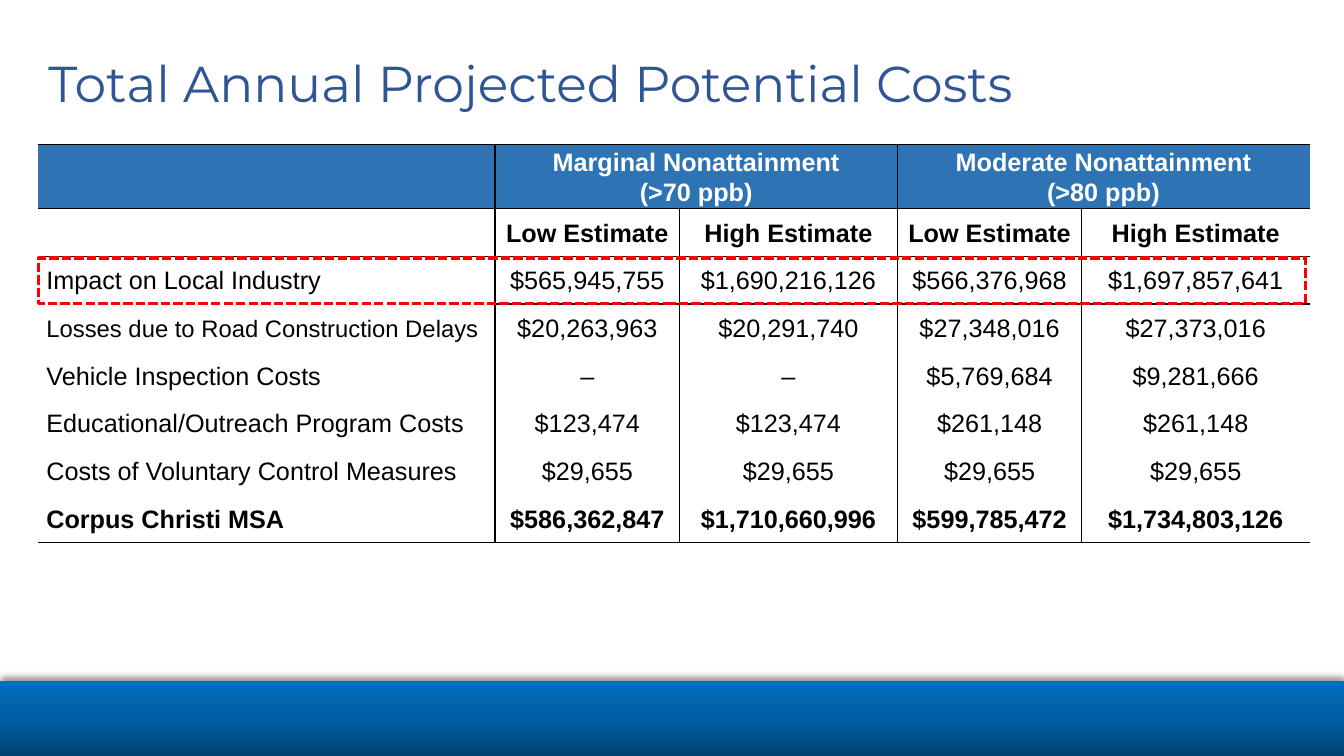
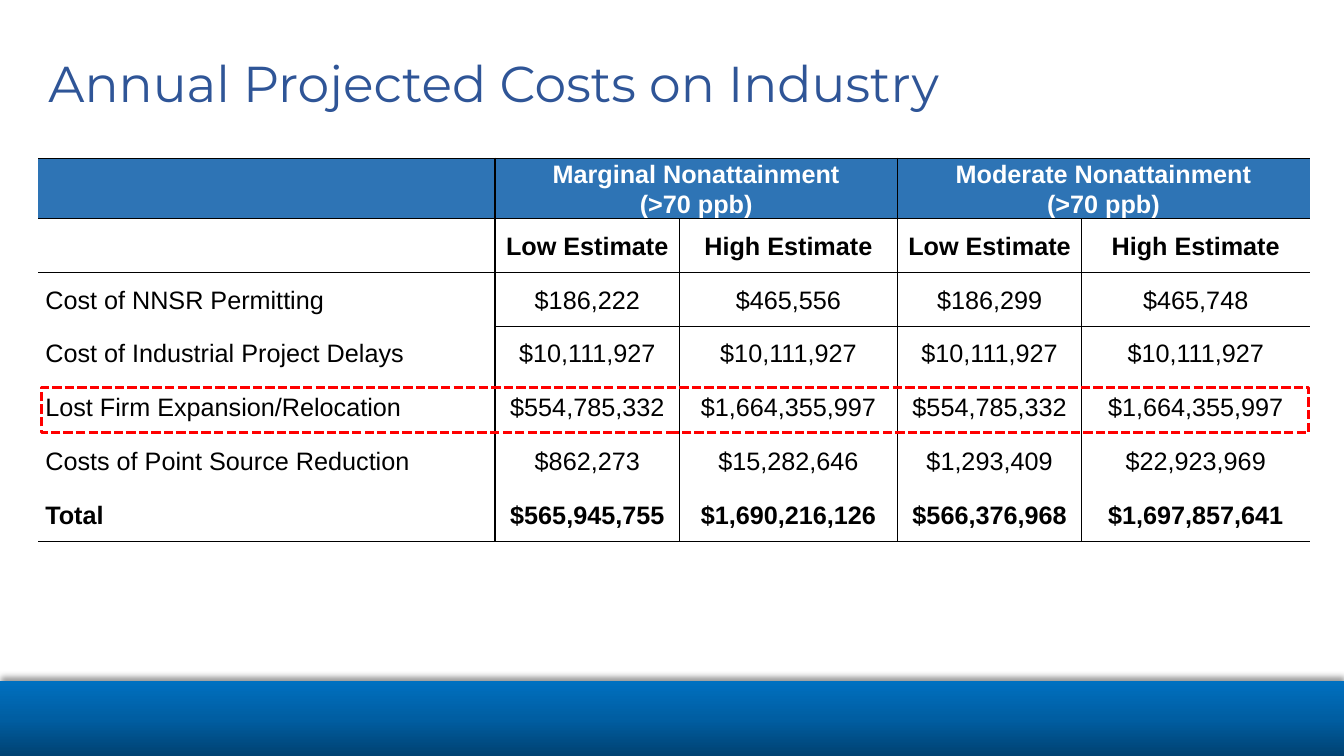
from copy import deepcopy
from dataclasses import dataclass

from pptx import Presentation
from pptx.dml.color import RGBColor
from pptx.enum.dml import MSO_LINE
from pptx.enum.shapes import MSO_SHAPE
from pptx.enum.text import MSO_ANCHOR, PP_ALIGN
from pptx.oxml import parse_xml
from pptx.oxml.ns import nsdecls, qn
from pptx.util import Inches, Pt

SQUARE_DASH = MSO_LINE.SQUARE_DOT
RECTANGLE = MSO_SHAPE.RECTANGLE
MIDDLE = MSO_ANCHOR.MIDDLE
LEFT, CENTER = PP_ALIGN.LEFT, PP_ALIGN.CENTER
TITLE_ONLY = 5
PLAIN_TABLE_STYLE = "{2D5ABB26-0587-4C30-8999-92F81FD0307C}"


@dataclass(frozen=True)
class Theme:
    title_font: str = "Montserrat"
    table_font: str = "Arial"
    title_size: float = 36
    table_size: float = 18
    long_label_size: float = 17
    rule_width: float = 1
    highlight_width: float = 2.25
    title: str = "2F5597"
    header: str = "2E74B5"
    header_text: str = "FFFFFF"
    text: str = "000000"
    highlight: str = "FF0000"
    band: tuple = ("004272", "005EA2", "0070C0")


THEME = Theme()
SLIDE_WIDTH, SLIDE_HEIGHT = 13.33, 7.5
BAND_HEIGHT = 0.74
MARGIN_LEFT = 0.38
COLUMN_WIDTHS = (4.53, 1.83, 2.16, 1.83, 2.26)
RULED_COLUMNS = (1, 3)  # a vertical rule stands left of each
HIGHLIGHT_WIDTH, HIGHLIGHT_HEIGHT = 12.57, 0.45
ESTIMATES = ("", "Low Estimate", "High Estimate", "Low Estimate", "High Estimate")
LONG_LABEL = "Losses due to Road Construction Delays"

TOTAL_COSTS = (
    ("Impact on Local Industry", "$565,945,755", "$1,690,216,126", "$566,376,968", "$1,697,857,641"),
    (LONG_LABEL, "$20,263,963", "$20,291,740", "$27,348,016", "$27,373,016"),
    ("Vehicle Inspection Costs", "–", "–", "$5,769,684", "$9,281,666"),
    ("Educational/Outreach Program Costs", "$123,474", "$123,474", "$261,148", "$261,148"),
    ("Costs of Voluntary Control Measures", "$29,655", "$29,655", "$29,655", "$29,655"),
    ("Corpus Christi MSA", "$586,362,847", "$1,710,660,996", "$599,785,472", "$1,734,803,126"),
)
INDUSTRY_COSTS = (
    ("Cost of NNSR Permitting", "$186,222", "$465,556", "$186,299", "$465,748"),
    ("Cost of Industrial Project Delays", "$10,111,927", "$10,111,927", "$10,111,927", "$10,111,927"),
    ("Lost Firm Expansion/Relocation", "$554,785,332", "$1,664,355,997", "$554,785,332", "$1,664,355,997"),
    ("Costs of Point Source Reduction", "$862,273", "$15,282,646", "$1,293,409", "$22,923,969"),
    ("Total", "$565,945,755", "$1,690,216,126", "$566,376,968", "$1,697,857,641"),
)


def rgb(value):
    return RGBColor.from_string(value)


def add_span(para, text, font, size, color, bold=False):
    span = para.add_run()
    span.text = text
    span.font.name = font
    span.font.size = Pt(size)
    span.font.color.rgb = rgb(color)
    span.font.bold = bold


def add_footer_band(slide):
    """Draw the gradient band and hand it to the slide's layout, which all slides share."""
    band = slide.shapes.add_shape(
        RECTANGLE, 0, Inches(SLIDE_HEIGHT - BAND_HEIGHT), Inches(SLIDE_WIDTH), Inches(BAND_HEIGHT))
    band.line.fill.background()
    band.fill.gradient()
    band.fill.gradient_angle = 90
    stop_list = band.element.spPr.find(".//" + qn("a:gsLst"))
    stop_list.insert(1, deepcopy(stop_list[0]))
    for index, (stop, color) in enumerate(zip(band.fill.gradient_stops, THEME.band)):
        stop.position = index / 2
        stop.color.rgb = rgb(color)
    band.shadow.inherit = False
    band.element.spPr.find(qn("a:effectLst")).append(parse_xml(
        f'<a:outerShdw {nsdecls("a")} blurRad="{Pt(4)}" dist="{Pt(3)}" dir="16200000" rotWithShape="0">'
        '<a:srgbClr val="000000"><a:alpha val="40000"/></a:srgbClr></a:outerShdw>'))
    slide.slide_layout.shapes.element.append(band.element)


def write_title(slide, text):
    box = slide.shapes.title
    box.left, box.top = Inches(MARGIN_LEFT), Inches(0.13)
    box.width, box.height = Inches(11.5), Inches(1.45)
    box.text_frame.vertical_anchor = MIDDLE
    para = box.text_frame.paragraphs[0]
    para.alignment = LEFT
    para.line_spacing = 0.9
    add_span(para, text, THEME.title_font, THEME.title_size, THEME.title)


def set_borders(cell, sides):
    """Rule the sides named by letters out of L, R, T and B."""
    properties = cell._tc.get_or_add_tcPr()
    for side in "LRTB":
        if side in sides:
            properties.append(parse_xml(
                f'<a:ln{side} {nsdecls("a")} w="{Pt(THEME.rule_width)}"><a:solidFill>'
                f'<a:srgbClr val="{THEME.text}"/></a:solidFill></a:ln{side}>'))


def cell_sides(row, column, last_row):
    sides = ""
    if column in RULED_COLUMNS:
        sides += "L"
    if column + 1 in RULED_COLUMNS:
        sides += "R"
    if row < 2 or (row == 2 and column > 0):
        sides += "T"
    if row in (0, last_row) or (row == 1 and column > 0):
        sides += "B"
    return sides


def fill_cell(cell, text, row, column, last_row, side_margin):
    set_borders(cell, cell_sides(row, column, last_row))
    if row == 0:
        cell.fill.solid()
        cell.fill.fore_color.rgb = rgb(THEME.header)
    else:
        cell.fill.background()
    cell.vertical_anchor = MIDDLE
    cell.margin_left = cell.margin_right = Inches(side_margin)
    cell.margin_top = cell.margin_bottom = 0
    if not text:
        return
    size = THEME.long_label_size if text == LONG_LABEL else THEME.table_size
    color = THEME.header_text if row == 0 else THEME.text
    frame = cell.text_frame
    for index, line in enumerate(text.split("\n")):
        para = frame.add_paragraph() if index else frame.paragraphs[0]
        para.alignment = CENTER if column else LEFT
        para.line_spacing = 1.07
        add_span(para, line, THEME.table_font, size, color, bold=row in (0, 1, last_row))


def add_cost_table(slide, top, height, header_height, limits, costs, body_margin):
    marginal, moderate = limits
    header = ("", f"Marginal Nonattainment\n({marginal})", "",
              f"Moderate Nonattainment\n({moderate})", "")
    rows = (header, ESTIMATES) + costs
    last_row = len(rows) - 1
    frame = slide.shapes.add_table(
        len(rows), len(COLUMN_WIDTHS), Inches(MARGIN_LEFT), Inches(top),
        Inches(sum(COLUMN_WIDTHS)), Inches(height))
    frame.element.find(".//" + qn("a:tableStyleId")).text = PLAIN_TABLE_STYLE
    table = frame.table
    table.first_row = table.horz_banding = False
    for column, width in zip(table.columns, COLUMN_WIDTHS):
        column.width = Inches(width)
    row_height = (height - header_height) / last_row
    for row, texts in enumerate(rows):
        table.rows[row].height = Inches(row_height if row else header_height)
        side_margin = 0.08 if row < 2 else body_margin
        for column, text in enumerate(texts):
            fill_cell(table.cell(row, column), text, row, column, last_row, side_margin)
    for column in RULED_COLUMNS:
        table.cell(0, column).merge(table.cell(0, column + 1))


def add_highlight(slide, left, top):
    box = slide.shapes.add_shape(
        RECTANGLE, Inches(left), Inches(top), Inches(HIGHLIGHT_WIDTH), Inches(HIGHLIGHT_HEIGHT))
    box.shadow.inherit = False
    box.fill.background()
    box.line.color.rgb = rgb(THEME.highlight)
    box.line.width = Pt(THEME.highlight_width)
    box.line.dash_style = SQUARE_DASH


def main():
    deck = Presentation()
    deck.slide_width, deck.slide_height = Inches(SLIDE_WIDTH), Inches(SLIDE_HEIGHT)
    layout = deck.slide_layouts[TITLE_ONLY]

    total_page = deck.slides.add_slide(layout)
    add_footer_band(total_page)
    write_title(total_page, "Total Annual Projected Potential Costs")
    add_cost_table(total_page, 1.43, 3.95, 0.64, (">70 ppb", ">80 ppb"), TOTAL_COSTS, 0.08)
    add_highlight(total_page, 0.38, 2.56)

    industry_page = deck.slides.add_slide(layout)
    write_title(industry_page, "Annual Projected Costs on Industry")
    add_cost_table(industry_page, 1.57, 3.8, 0.6, (">70 ppb", ">70 ppb"), INDUSTRY_COSTS, 0.07)
    add_highlight(industry_page, 0.41, 3.84)

    deck.save("out.pptx")


if __name__ == "__main__":
    main()
